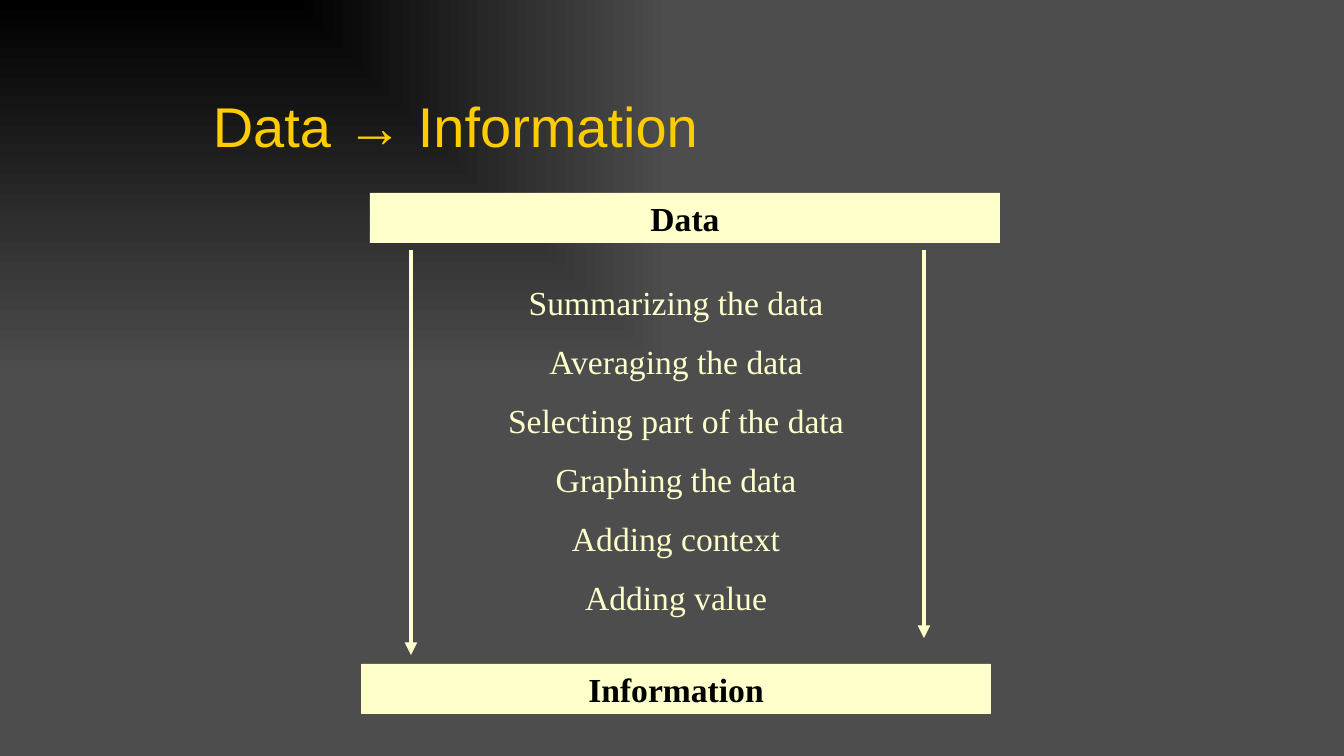
from lxml import etree
from pptx import Presentation
from pptx import util as u
from pptx.dml.color import RGBColor
from pptx.enum import shapes, text
from pptx.oxml import parse_xml
from pptx.oxml.ns import nsdecls, qn

PX = 914400 / 100.8
CREAM = "FFFFCC"
SERIF = "Times New Roman"
STEPS = [
    "Summarizing the data",
    "Averaging the data",
    "Selecting part of the data",
    "Graphing the data",
    "Adding context",
    "Adding value",
]


def px(n):
    return u.Emu(round(n * PX))


def color(code):
    return RGBColor.from_string(code)


def write(shape, lines, size, face, ink, bold=False, align=text.PP_ALIGN.CENTER,
          anchor=text.MSO_ANCHOR.TOP):
    frame = shape.text_frame
    frame.word_wrap = True
    frame.vertical_anchor = anchor
    for i, line in enumerate(lines):
        para = frame.add_paragraph() if i else frame.paragraphs[0]
        para.text = line
        para.alignment = align
        if i:
            para.space_before = u.Pt(13.3)
        font = para.font
        font.size = u.Pt(size)
        font.name = face
        font.bold = bold
        font.color.rgb = color(ink)


def add_text(slide, x, y, w, h, lines, *style, **more):
    box = slide.shapes.add_textbox(px(x), px(y), px(w), px(h))
    write(box, lines, *style, **more)


def add_bar(slide, x, y, label):
    bar = slide.shapes.add_shape(
        shapes.MSO_SHAPE.RECTANGLE, px(x), px(y), px(630), px(50))
    bar.shadow.inherit = False
    bar.fill.solid()
    bar.fill.fore_color.rgb = color(CREAM)
    bar.line.fill.background()
    write(bar, [label], 24, SERIF, "000000", bold=True)


def add_arrow(slide, x, top, end):
    arrow = slide.shapes.add_connector(
        shapes.MSO_CONNECTOR.STRAIGHT, px(x), px(top), px(x), px(end))
    arrow.line.color.rgb = color(CREAM)
    arrow.line.width = u.Pt(3)
    etree.SubElement(arrow.line._get_or_add_ln(), qn("a:tailEnd"), type="triangle")
    etree.SubElement(arrow._element.spPr, qn("a:effectLst"))


def set_back(slide, start, end):
    # Rectangular gradient spreading from the top left corner
    fill = slide.background.fill
    fill.gradient()
    grad = slide._element.find(".//" + qn("a:gradFill"))
    grad.getparent().replace(grad, parse_xml(
        f'<a:gradFill {nsdecls("a")} rotWithShape="0"><a:gsLst>'
        f'<a:gs pos="0"><a:srgbClr val="{start}"/></a:gs>'
        f'<a:gs pos="100000"><a:srgbClr val="{end}"/></a:gs></a:gsLst>'
        '<a:path path="rect"><a:fillToRect r="100000" b="100000"/></a:path>'
        '</a:gradFill>'))


def main():
    deck = Presentation()
    deck.slide_width, deck.slide_height = px(1344), px(756)
    slide = deck.slides.add_slide(deck.slide_layouts[6])
    set_back(slide, "000000", "4D4D4D")

    # Title
    add_text(slide, 203, 87, 953, 77, ["Data → Information"], 40, "Arial", "FFCC00",
             align=text.PP_ALIGN.LEFT, anchor=text.MSO_ANCHOR.BOTTOM)

    # Start and end of the process
    add_bar(slide, 370, 193, "Data")
    add_bar(slide, 361, 664, "Information")

    # Steps between them
    add_text(slide, 361, 277, 630, 356, STEPS, 24, SERIF, CREAM)

    # Downward arrows
    add_arrow(slide, 411, 250, 655)
    add_arrow(slide, 924, 250, 638)

    deck.save("out.pptx")


if __name__ == "__main__":
    main()
